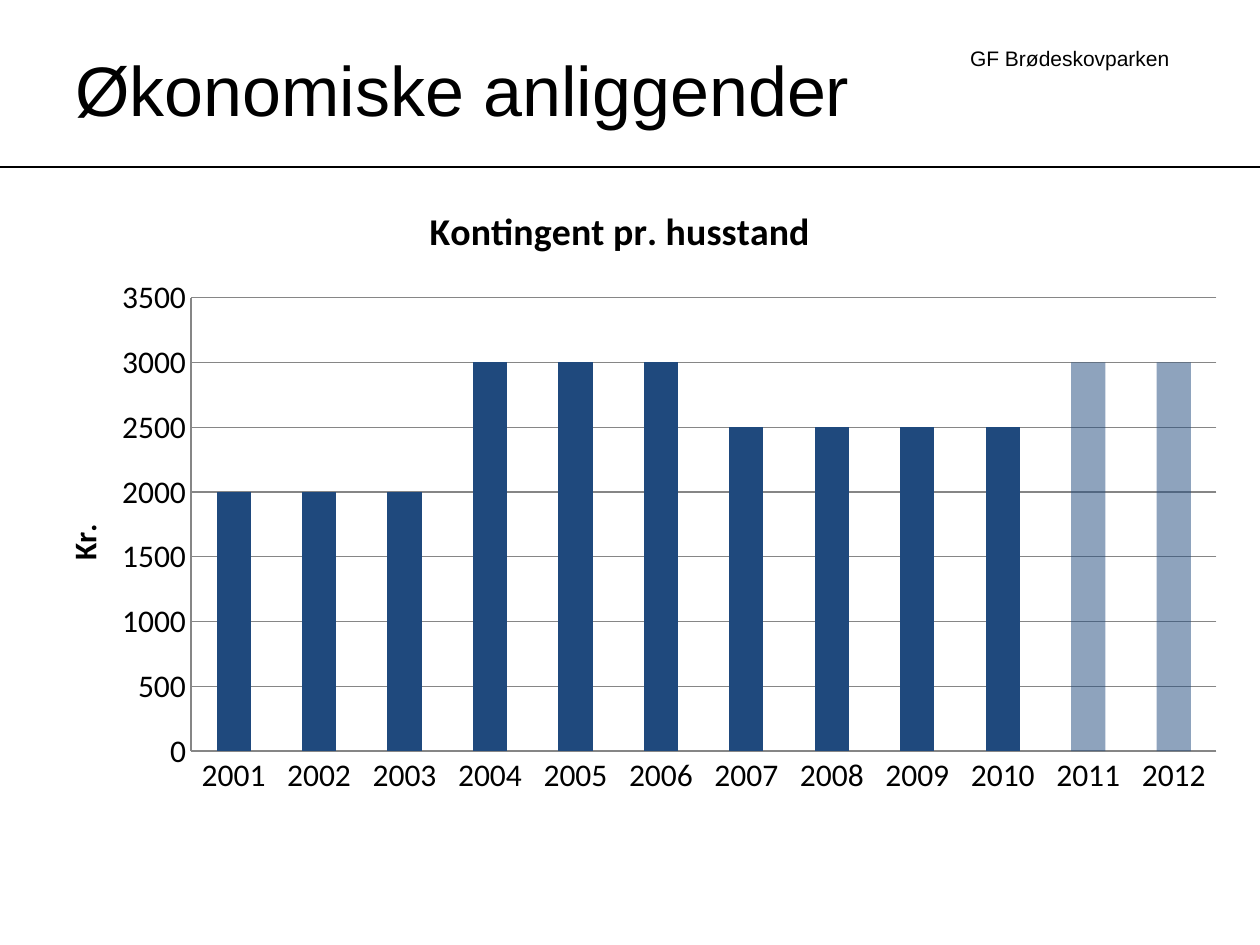
from lxml.etree import SubElement
from pptx import Presentation
from pptx.chart.data import CategoryChartData
from pptx.dml.color import RGBColor
from pptx.enum.chart import XL_CHART_TYPE, XL_TICK_MARK
from pptx.enum.shapes import MSO_CONNECTOR
from pptx.enum.text import MSO_ANCHOR, PP_ALIGN
from pptx.oxml.ns import qn
from pptx.util import Pt

PX = 914400 / 126
COLOURS = {"text": "000000", "bar": "1F497D", "grid": "868686"}
colour = {name: RGBColor.from_string(value) for name, value in COLOURS.items()}


def add_text(page, text, bounds, size, align, anchor):
    box = page.shapes.add_textbox(*[round(n * PX) for n in bounds])
    box.text_frame.word_wrap = True
    box.text_frame.vertical_anchor = anchor
    paragraph = box.text_frame.paragraphs[0]
    paragraph.alignment = align
    span = paragraph.add_run()
    span.text = text
    span.font.name = "Arial"
    span.font.size = Pt(size)
    span.font.color.rgb = colour["text"]


def place(element, index, **fractions):
    """Fix a chart part's position, as fractions of the chart's size."""
    for old in element.findall(qn("c:layout")):
        element.remove(old)
    layout = SubElement(element, qn("c:layout"))
    element.insert(index, layout)
    manual = SubElement(layout, qn("c:manualLayout"))
    if "w" in fractions:
        SubElement(manual, qn("c:layoutTarget")).set("val", "inner")
    for key in ("x", "y"):
        SubElement(manual, qn(f"c:{key}Mode")).set("val", "edge")
    for key, value in fractions.items():
        SubElement(manual, qn(f"c:{key}")).set("val", str(value))


deck = Presentation()
deck.slide_width = round(1260 * PX)
deck.slide_height = round(945 * PX)
page = deck.slides.add_slide(deck.slide_layouts[6])

# Header
add_text(page, "GF Brødeskovparken", (955, 39, 227, 38), 12,
         PP_ALIGN.RIGHT, MSO_ANCHOR.TOP)
rule_y = round(167 * PX)
rule = page.shapes.add_connector(MSO_CONNECTOR.STRAIGHT, 0, rule_y,
                                 deck.slide_width, rule_y)
rule.line.color.rgb = colour["text"]
rule.line.width = Pt(1.5)
SubElement(rule._element.spPr, qn("a:effectLst"))
add_text(page, "Økonomiske anliggender", (63, 29, 882, 118), 40,
         PP_ALIGN.LEFT, MSO_ANCHOR.MIDDLE)

# Column chart
data = CategoryChartData()
data.categories = [str(year) for year in range(2001, 2013)]
data.add_series("Series 1", [2000] * 3 + [3000] * 3 + [2500] * 4 + [3000] * 2)
chart = page.shapes.add_chart(
    XL_CHART_TYPE.COLUMN_CLUSTERED,
    *[round(n * PX) for n in (20, 178, 1221, 630)], data).chart
chart.has_legend = False
chart.font.name = "Calibri"
chart.font.size = Pt(18)
chart.font.color.rgb = colour["text"]

years, amounts = chart.category_axis, chart.value_axis
for axis in (years, amounts):
    axis.major_tick_mark = XL_TICK_MARK.NONE
    axis.minor_tick_mark = XL_TICK_MARK.NONE
    axis.format.line.color.rgb = colour["grid"]
    axis.format.line.width = Pt(0.75)
amounts.minimum_scale = 0
amounts.maximum_scale = 3500
amounts.major_unit = 500
amounts.has_major_gridlines = True
amounts.major_gridlines.format.line.color.rgb = colour["grid"]
amounts.major_gridlines.format.line.width = Pt(0.75)

chart.has_title = True
for title, text, size in ((chart.chart_title, "Kontingent pr. husstand", 21.6),
                          (amounts.axis_title, "Kr.", 18)):
    span = title.text_frame.paragraphs[0].add_run()
    span.text = text
    span.font.name = "Calibri"
    span.font.size = Pt(size)
    span.font.bold = True
    span.font.color.rgb = colour["text"]

plot = chart.plots[0]
plot.gap_width = 150
plot.vary_by_categories = False
bars = plot.series[0]
bars.format.fill.solid()
bars.format.fill.fore_color.rgb = colour["bar"]
for index in (10, 11):
    fill = bars.points[index].format.fill
    fill.solid()
    fill.fore_color.rgb = colour["bar"]
    for tint in bars.points[index]._element.iter(qn("c:dPt")):
        if tint.find(qn("c:idx")).get("val") == str(index):
            SubElement(next(tint.iter(qn("a:srgbClr"))), qn("a:alpha")).set("val", "50000")

place(chart._chartSpace.chart.plotArea, 0, x=0.14, y=0.19, w=0.84, h=0.72)
place(chart.chart_title._element, 1, x=0.33, y=0.03)
place(amounts.axis_title._element, 1, x=0.03, y=0.54)

deck.save("out.pptx")
